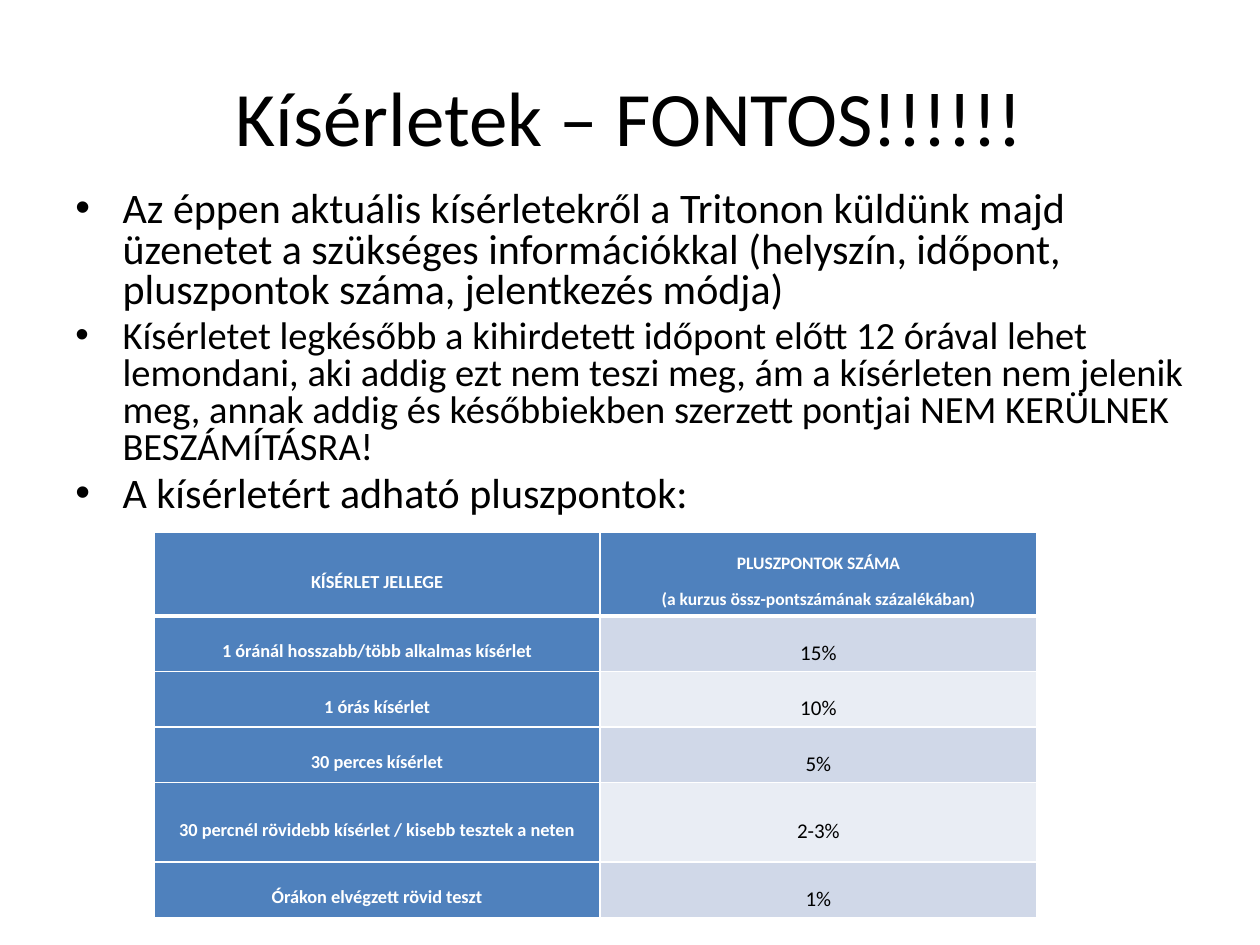
import pptx
import pptx.dml.color
import pptx.enum.text
import pptx.oxml
import pptx.oxml.ns
import pptx.util

Pt = pptx.util.Pt
RGBColor = pptx.dml.color.RGBColor
CENTER = pptx.enum.text.PP_ALIGN.CENTER
MIDDLE = pptx.enum.text.MSO_ANCHOR.MIDDLE

BLACK = RGBColor(0x00, 0x00, 0x00)
WHITE = RGBColor(0xFF, 0xFF, 0xFF)
BLUE = RGBColor(0x4F, 0x81, 0xBD)
BANDS = [RGBColor(0xD0, 0xD8, 0xE8), RGBColor(0xE9, 0xED, 0xF4)]

TITLE = "Kísérletek – FONTOS!!!!!!"
BULLETS = [
    ("Az éppen aktuális kísérletekről a Tritonon küldünk majd üzenetet a szükséges "
     "információkkal (helyszín, időpont, pluszpontok száma, jelentkezés módja)", 24),
    ("Kísérletet legkésőbb a kihirdetett időpont előtt 12 órával lehet lemondani, aki "
     "addig ezt nem teszi meg, ám a kísérleten nem jelenik meg, annak addig és "
     "későbbiekben szerzett pontjai NEM KERÜLNEK BESZÁMÍTÁSRA!", 22),
    ("A kísérletért adható pluszpontok:", 24),
]
HEADER = (["KÍSÉRLET JELLEGE"],
          ["PLUSZPONTOK SZÁMA", "(a kurzus össz-pontszámának százalékában)"])
POINTS = [
    ("1 óránál hosszabb/több alkalmas kísérlet", "15%"),
    ("1 órás kísérlet", "10%"),
    ("30 perces kísérlet", "5%"),
    ("30 percnél rövidebb kísérlet / kisebb tesztek a neten", "2-3%"),
    ("Órákon elvégzett rövid teszt", "1%"),
]
COL_WIDTHS = [255, 249.4]
ROW_HEIGHTS = [45.4, 26, 26, 26, 45.4, 26]


def apply(obj, values):
    for name, value in values.items():
        setattr(obj, name, value)


class Deck:
    font = "Calibri"

    def __init__(self, width, height):
        self.prs = pptx.Presentation()
        apply(self.prs, {"slide_width": Pt(width), "slide_height": Pt(height)})
        self.s = self.prs.slides.add_slide(self.prs.slide_layouts[6])

    def paragraph(self, tf, i, text, size, color=BLACK, bold=False, **fmt):
        p = tf.paragraphs[0] if i == 0 else tf.add_paragraph()
        apply(p, fmt)
        r = p.add_run()
        r.text = text
        apply(r.font, {"name": self.font, "size": Pt(size), "bold": bold})
        r.font.color.rgb = color
        return p

    def frame(self, x, y, w, h, **fmt):
        tf = self.s.shapes.add_textbox(Pt(x), Pt(y), Pt(w), Pt(h)).text_frame
        apply(tf, {"word_wrap": True, **fmt})
        return tf

    def title(self, text, x, y, w, h):
        tf = self.frame(x, y, w, h, vertical_anchor=MIDDLE)
        self.paragraph(tf, 0, text, 44, alignment=CENTER)

    def bullets(self, items, x, y, w, h):
        tf = self.frame(x, y, w, h)
        for i, (text, size) in enumerate(items):
            p = self.paragraph(tf, i, text, size, line_spacing=0.8,
                               space_before=Pt(size * 0.2))
            pPr = p._p.get_or_add_pPr()
            pPr.set("marL", str(Pt(27)))
            pPr.set("indent", str(-Pt(27)))
            for tag, key, value in (("buFont", "typeface", "Arial"),
                                    ("buChar", "char", "•")):
                pptx.oxml.ns.qn("a:" + tag)
                pPr.append(self.element(f'<a:{tag} %s {key}="{value}"/>'))

    def element(self, xml):
        return pptx.oxml.parse_xml(xml % pptx.oxml.ns.nsdecls("a"))

    def borders(self, cell, **widths):
        tcPr = cell._tc.get_or_add_tcPr()
        for i, side in enumerate("LRTB"):
            width = Pt(widths.get(side, 1))
            tcPr.insert(i, self.element(
                f'<a:ln{side} %s w="{width}"><a:solidFill><a:srgbClr val="{WHITE}"/>'
                f'</a:solidFill></a:ln{side}>'))

    def cell(self, cell, lines, size, color, fill, bold, **widths):
        apply(cell, {"vertical_anchor": MIDDLE, "margin_left": Pt(5.4),
                     "margin_right": Pt(5.4), "margin_top": Pt(3.6),
                     "margin_bottom": Pt(3.6)})
        cell.fill.solid()
        cell.fill.fore_color.rgb = fill
        for i, line in enumerate(lines):
            self.paragraph(cell.text_frame, i, line, size, color, bold,
                           alignment=CENTER, line_spacing=1.7)
        self.borders(cell, **widths)

    def table(self, header, rows, x, y, col_widths, row_heights):
        table = self.s.shapes.add_table(
            len(row_heights), len(col_widths), Pt(x), Pt(y),
            Pt(sum(col_widths)), Pt(sum(row_heights))).table
        for col, width in zip(table.columns, col_widths):
            col.width = Pt(width)
        for row, height in zip(table.rows, row_heights):
            row.height = Pt(height)
        for j, (lines, size) in enumerate(zip(header, (10.5, 10))):
            self.cell(table.cell(0, j), lines, size, WHITE, BLUE, True, B=3)
        for i, (label, value) in enumerate(rows):
            top = 3 if i == 0 else 1
            self.cell(table.cell(i + 1, 0), [label], 10.5, WHITE, BLUE, True, T=top)
            self.cell(table.cell(i + 1, 1), [value], 12, BLACK, BANDS[i % 2], False, T=top)


def main():
    deck = Deck(720, 540)
    deck.title(TITLE, 36, 36, 648, 60)
    deck.bullets(BULLETS, 36, 106, 648, 366)
    deck.table(HEADER, POINTS, 88, 304, COL_WIDTHS, ROW_HEIGHTS)
    deck.prs.save("out.pptx")


if __name__ == "__main__":
    main()
